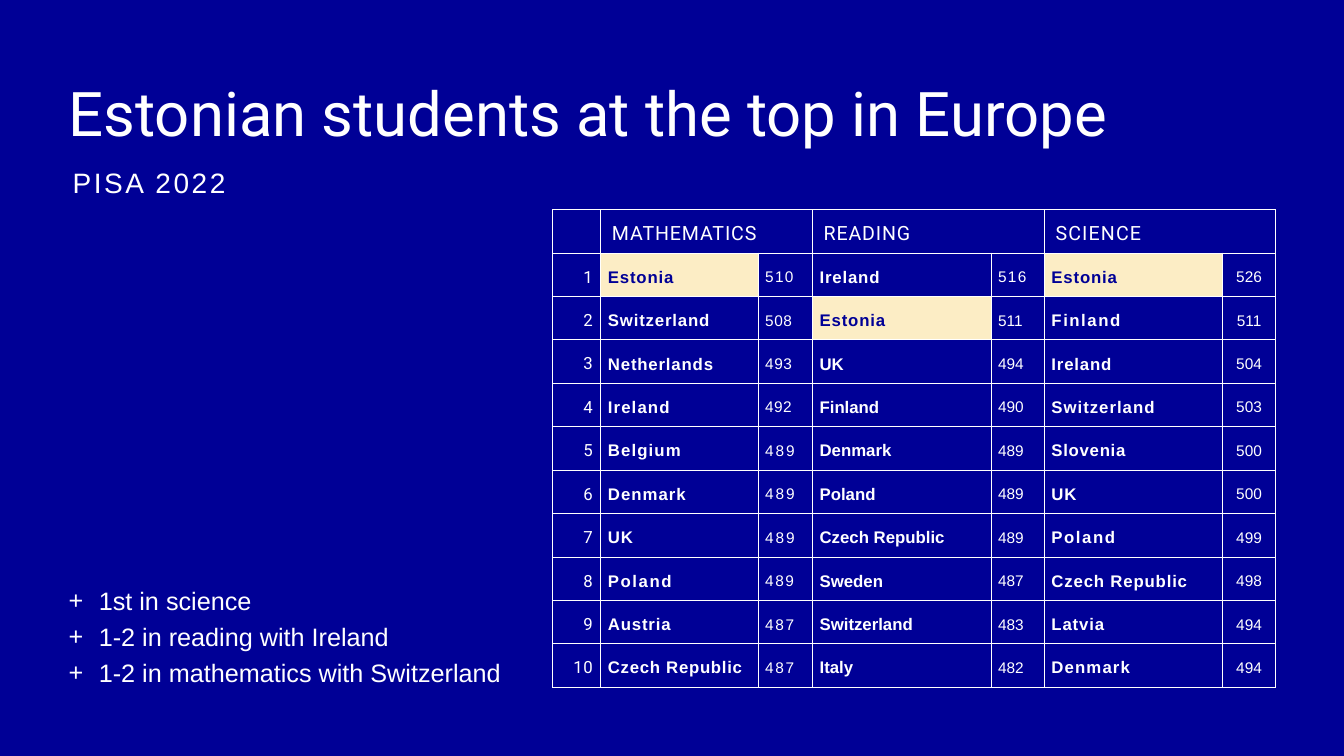
from dataclasses import dataclass
from typing import NamedTuple

from lxml import etree
from pptx import Presentation
from pptx.dml.color import RGBColor
from pptx.enum.text import MSO_ANCHOR, MSO_AUTO_SIZE, PP_ALIGN
from pptx.oxml.ns import qn
from pptx.util import Inches, Pt

LEFT, CENTER, RIGHT = PP_ALIGN.LEFT, PP_ALIGN.CENTER, PP_ALIGN.RIGHT
TOP, MIDDLE, BOTTOM = MSO_ANCHOR.TOP, MSO_ANCHOR.MIDDLE, MSO_ANCHOR.BOTTOM
NO_AUTOFIT = MSO_AUTO_SIZE.NONE
TITLE_ONLY_LAYOUT = 5


@dataclass(frozen=True)
class Theme:
    blue: str = "000096"
    white: str = "FFFFFF"
    cream: str = "FCEDC5"
    heading_font: str = "Roboto"
    body_font: str = "Arial"
    title_size: float = 44
    subtitle_size: float = 20
    bullet_size: float = 18
    header_size: float = 14
    name_size: float = 12
    score_size: float = 11
    border_width: float = 0.75


THEME = Theme()


class TextStyle(NamedTuple):
    font: str
    size: float
    color: str = THEME.white
    bold: bool = False
    spacing: float = 0  # between letters, in points


class Entry(NamedTuple):
    country: str
    score: int
    country_spacing: float
    score_spacing: float = 0


class Subject(NamedTuple):
    heading: str
    heading_spacing: float
    score_align: PP_ALIGN
    score_margin: float
    entries: list[Entry]


class Area(NamedTuple):
    left: float
    top: float
    width: float
    height: float


TITLE_AREA = Area(0.68, 0.72, 12.09, 0.78)
SUBTITLE_AREA = Area(0.4, 1.68, 8.51, 0.3)
BULLET_AREA = Area(0.68, 2.49, 10.38, 4.33)
TABLE_AREA = Area(5.48, 2.08, 7.17, 4.74)
COLUMN_WIDTHS = [0.48, 1.56, 0.54, 1.77, 0.53, 1.77, 0.52]
HIGHLIGHTED = "Estonia"
BULLETS = ["1st in science", "1-2 in reading with Ireland",
           "1-2 in mathematics with Switzerland"]
RANK_SPACINGS = [-0.5, 0.5, 0.8, 1, 0.7, 0.9, 0.1, 1.1, 0.9, 0.5]

SUBJECTS = [
    Subject("MATHEMATICS", 0.6, LEFT, 0.07, [
        Entry("Estonia", 510, 0.6, 0.9), Entry("Switzerland", 508, 0.6, 0.4),
        Entry("Netherlands", 493, 0.6, 0.4), Entry("Ireland", 492, 0.8, 0.3),
        Entry("Belgium", 489, 0.8, 1.4), Entry("Denmark", 489, 0.7, 1.4),
        Entry("UK", 489, 0.6, 1.4), Entry("Poland", 489, 1.1, 1.1),
        Entry("Austria", 487, 0.6, 1.2), Entry("Czech Republic", 487, 0.5, 1.2),
    ]),
    Subject("READING", 0.6, LEFT, 0.07, [
        Entry("Ireland", 516, 0.6, 0.9), Entry("Estonia", 511, 0.6),
        Entry("UK", 494, 0), Entry("Finland", 490, 0),
        Entry("Denmark", 489, 0), Entry("Poland", 489, 0),
        Entry("Czech Republic", 489, 0), Entry("Sweden", 487, 0),
        Entry("Switzerland", 483, 0), Entry("Italy", 482, 0),
    ]),
    Subject("SCIENCE", 0.8, CENTER, 0, [
        Entry("Estonia", 526, 0.6), Entry("Finland", 511, 1.1),
        Entry("Ireland", 504, 0.6), Entry("Switzerland", 503, 0.7),
        Entry("Slovenia", 500, 0.5), Entry("UK", 500, 0.6),
        Entry("Poland", 499, 1.1), Entry("Czech Republic", 498, 0.6),
        Entry("Latvia", 494, 0.6), Entry("Denmark", 494, 0.8),
    ]),
]


def style_paragraph(paragraph, style: TextStyle) -> None:
    for span in paragraph.runs:
        span.font.name = style.font
        span.font.size = Pt(style.size)
        span.font.bold = style.bold
        span.font.color.rgb = RGBColor.from_string(style.color)
        span._r.get_or_add_rPr().set("spc", str(round(style.spacing * 100)))


def set_frame(frame, anchor: MSO_ANCHOR, top_margin: float = 0) -> None:
    frame.word_wrap = True
    frame.auto_size = NO_AUTOFIT
    frame.vertical_anchor = anchor
    frame.margin_left = frame.margin_right = frame.margin_bottom = 0
    frame.margin_top = Inches(top_margin)


def add_title(page) -> None:
    title = page.shapes.title
    title.left, title.top, title.width, title.height = map(Inches, TITLE_AREA)
    set_frame(title.text_frame, TOP, 0.11)
    title.text_frame.text = "Estonian students at the top in Europe"
    para = title.text_frame.paragraphs[0]
    para.alignment = LEFT
    para.line_spacing = 0.9
    style_paragraph(para, TextStyle(THEME.heading_font, THEME.title_size))


def add_subtitle(page) -> None:
    box = page.shapes.add_textbox(*map(Inches, SUBTITLE_AREA))
    set_frame(box.text_frame, TOP, 0.03)
    box.text_frame.margin_left = Inches(0.32)
    box.text_frame.text = "PISA 2022"
    para = box.text_frame.paragraphs[0]
    para.line_spacing = Pt(19)
    style_paragraph(para, TextStyle(THEME.body_font, THEME.subtitle_size, spacing=1.8))


def add_bullets(page) -> None:
    box = page.shapes.add_textbox(*map(Inches, BULLET_AREA))
    frame = box.text_frame
    set_frame(frame, BOTTOM)
    frame.text = "\n".join(BULLETS)
    for index, para in enumerate(frame.paragraphs):
        properties = para._p.get_or_add_pPr()
        properties.set("marL", str(Inches(0.3)))
        properties.set("indent", str(-Inches(0.3)))
        color = etree.SubElement(properties, qn("a:buClr"))
        etree.SubElement(color, qn("a:srgbClr"), val=THEME.white)
        etree.SubElement(properties, qn("a:buFont"), typeface=THEME.body_font)
        etree.SubElement(properties, qn("a:buChar"), char="+")
        if index:
            para.space_before = Pt(4)
        style_paragraph(para, TextStyle(THEME.body_font, THEME.bullet_size))


def format_cell(cell, fill: str = THEME.blue) -> None:
    cell.fill.solid()
    cell.fill.fore_color.rgb = RGBColor.from_string(fill)
    properties = cell._tc.get_or_add_tcPr()
    for position, side in enumerate(("lnL", "lnR", "lnT", "lnB")):
        border = etree.Element(qn(f"a:{side}"), w=str(Pt(THEME.border_width)))
        solid = etree.SubElement(border, qn("a:solidFill"))
        etree.SubElement(solid, qn("a:srgbClr"), val=THEME.white)
        properties.insert(position, border)


def write_cell(cell, text: str, style: TextStyle, left: float = 0.07,
               right: float = 0, align: PP_ALIGN = LEFT) -> None:
    cell.margin_left, cell.margin_right = Inches(left), Inches(right)
    cell.margin_top, cell.margin_bottom = Inches(0.05), 0
    cell.vertical_anchor = MIDDLE
    cell.text_frame.text = text
    para = cell.text_frame.paragraphs[0]
    para.alignment = align
    style_paragraph(para, style)


def add_ranking_table(page) -> None:
    row_count = len(RANK_SPACINGS) + 1
    table = page.shapes.add_table(
        row_count, len(COLUMN_WIDTHS), *map(Inches, TABLE_AREA)).table
    table.first_row = table.horz_banding = False
    for column, width in zip(table.columns, COLUMN_WIDTHS):
        column.width = Inches(width)
    for row in table.rows:
        row.height = Inches(TABLE_AREA.height / row_count)
        for cell in row.cells:
            highlighted = False
            format_cell(cell)

    # Rank numbers
    for rank, spacing in enumerate(RANK_SPACINGS, 1):
        style = TextStyle(THEME.heading_font, THEME.name_size, spacing=spacing)
        write_cell(table.cell(rank, 0), str(rank), style, right=0.08, align=RIGHT)

    # One pair of columns per subject
    for index, subject in enumerate(SUBJECTS):
        column = 1 + 2 * index
        header = table.cell(0, column)
        header.merge(table.cell(0, column + 1))
        write_cell(header, subject.heading, TextStyle(
            THEME.heading_font, THEME.header_size, spacing=subject.heading_spacing), left=0.11)
        for rank, entry in enumerate(subject.entries, 1):
            country = table.cell(rank, column)
            highlighted = entry.country == HIGHLIGHTED
            if highlighted:
                country.fill.fore_color.rgb = RGBColor.from_string(THEME.cream)
            write_cell(country, entry.country, TextStyle(
                THEME.body_font, THEME.name_size, THEME.blue if highlighted else THEME.white,
                True, entry.country_spacing))
            write_cell(table.cell(rank, column + 1), str(entry.score), TextStyle(
                THEME.body_font, THEME.score_size, spacing=entry.score_spacing),
                left=subject.score_margin, align=subject.score_align)


def main() -> None:
    deck = Presentation()
    deck.slide_width, deck.slide_height = Inches(13.33), Inches(7.5)
    page = deck.slides.add_slide(deck.slide_layouts[TITLE_ONLY_LAYOUT])
    page.background.fill.solid()
    page.background.fill.fore_color.rgb = RGBColor.from_string(THEME.blue)
    add_title(page)
    add_bullets(page)
    add_subtitle(page)
    add_ranking_table(page)
    deck.save("out.pptx")


if __name__ == "__main__":
    main()
